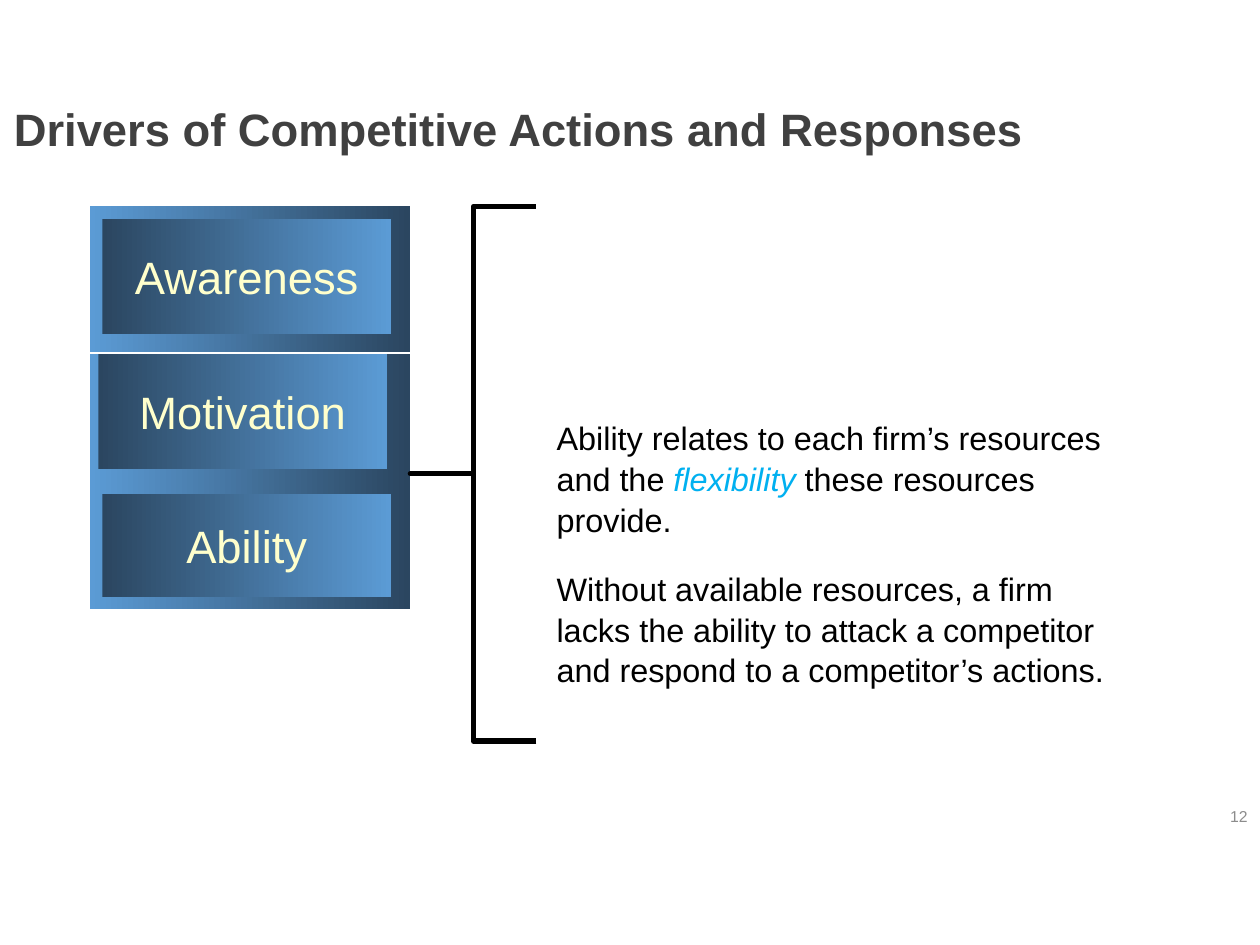
from pptx import Presentation
from pptx.dml.color import RGBColor
from pptx.enum.shapes import MSO_SHAPE as Shape
from pptx.enum.text import MSO_ANCHOR as Anchor, PP_ALIGN as Align
from pptx.util import Pt

COLORS = {
    "title": "404040", "number": "8C8C8C", "label": "FFFFCC", "body": "000000",
    "accent": "00B0F0", "light": "5B9BD5", "dark": "2B4660",
}
FONT = "Arial"
TITLE = "Drivers of Competitive Actions and Responses"
PAGE_NUMBER = "12"

# label, outer top, outer height, inner left, inner top, inner height
DRIVERS = [
    ("Awareness", 118, 83, 58.5, 125.3, 65.5),
    ("Motivation", 202.3, 77.8, 56.2, 202.3, 65.5),
    ("Ability", 275, 72.8, 58.5, 282.3, 59),
]
OUTER_LEFT, OUTER_WIDTH, INNER_WIDTH = 51.2, 183, 165

# Each paragraph is a list of (text, emphasised) runs
EXPLANATION = [
    [("Ability relates to each firm’s resources and the ", False),
     ("flexibility", True), (" these resources provide.", False)],
    [("Without available resources, a firm lacks the ability to attack a competitor "
      "and respond to a competitor’s actions.", False)],
]


def rgb(name):
    return RGBColor.from_string(COLORS[name])


def add_run(paragraph, text, size, color, bold=False, italic=False):
    run = paragraph.add_run()
    run.text = text
    font = run.font
    font.name, font.size = FONT, Pt(size)
    font.bold, font.italic = bold, italic
    font.color.rgb = rgb(color)


def write(shape, paragraphs, size, color, align=Align.LEFT, anchor=Anchor.MIDDLE,
          bold=False, line_spacing=1.0, gap=0):
    """Fill a shape with paragraphs of (text, emphasised) runs."""
    frame = shape.text_frame
    frame.word_wrap = True
    frame.vertical_anchor = anchor
    for index, runs in enumerate(paragraphs):
        paragraph = frame.add_paragraph() if index else frame.paragraphs[0]
        paragraph.alignment = align
        paragraph.line_spacing = line_spacing
        paragraph.space_before = Pt(gap if index else 0)
        for text, emphasised in runs:
            add_run(paragraph, text, size, "accent" if emphasised else color,
                    bold=bold, italic=emphasised)


def add_gradient_box(shapes, left, top, width, height, colors):
    box = shapes.add_shape(Shape.RECTANGLE, Pt(left), Pt(top), Pt(width), Pt(height))
    box.shadow.inherit = False
    box.line.fill.background()
    box.fill.gradient()
    box.fill.gradient_angle = 0
    for stop, color in zip(box.fill.gradient_stops, colors):
        stop.color.rgb = rgb(color)
    return box


def add_driver(slide, label, top, height, inner_left, inner_top, inner_height):
    group = slide.shapes.add_group_shape()
    add_gradient_box(group.shapes, OUTER_LEFT, top, OUTER_WIDTH, height, ("light", "dark"))
    inner = add_gradient_box(group.shapes, inner_left, inner_top, INNER_WIDTH,
                             inner_height, ("dark", "light"))
    write(inner, [[(label, False)]], 25.9, "label", align=Align.CENTER)


def add_brace(slide):
    brace = slide.shapes.add_shape(Shape.LEFT_BRACE, Pt(234.5), Pt(118), Pt(72), Pt(305.5))
    brace.adjustments[0], brace.adjustments[1] = 0, 0.5
    brace.shadow.inherit = False
    brace.fill.background()
    brace.line.color.rgb = rgb("body")
    brace.line.width = Pt(3)


def main():
    presentation = Presentation()
    presentation.slide_width, presentation.slide_height = Pt(720), Pt(540)
    slide = presentation.slides.add_slide(presentation.slide_layouts[5])

    title = slide.shapes.title
    title.left, title.top, title.width, title.height = Pt(0.7), Pt(56), Pt(612), Pt(39)
    write(title, [[(TITLE, False)]], 25.9, "title", bold=True, line_spacing=0.9)

    number = slide.shapes.add_textbox(Pt(684.7), Pt(456.5), Pt(35.3), Pt(19.5))
    write(number, [[(PAGE_NUMBER, False)]], 9, "number", align=Align.RIGHT)

    for driver in DRIVERS:
        add_driver(slide, *driver)
    add_brace(slide)

    explanation = slide.shapes.add_textbox(Pt(311), Pt(234.5), Pt(335), Pt(161))
    write(explanation, EXPLANATION, 18.5, "body", anchor=Anchor.TOP,
          line_spacing=1.05, gap=16)

    presentation.save("out.pptx")


if __name__ == "__main__":
    main()
